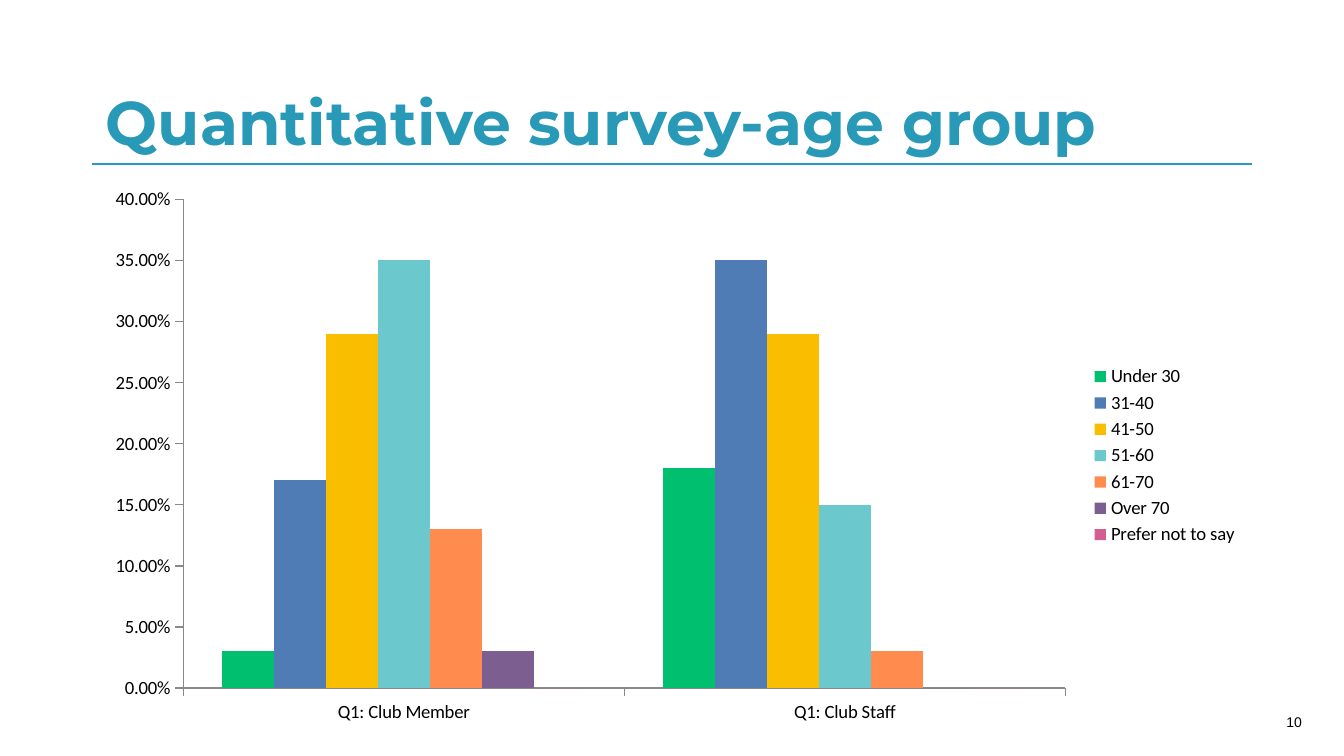
from typing import NamedTuple

from lxml import etree
from pptx import Presentation
from pptx.chart.data import CategoryChartData
from pptx.dml.color import RGBColor
from pptx.enum.chart import XL_CHART_TYPE, XL_LEGEND_POSITION, XL_TICK_MARK
from pptx.enum.shapes import MSO_CONNECTOR
from pptx.enum.text import MSO_ANCHOR, MSO_AUTO_SIZE, PP_ALIGN
from pptx.oxml.ns import qn
from pptx.util import Emu, Pt

COLUMNS = XL_CHART_TYPE.COLUMN_CLUSTERED
LEGEND_RIGHT = XL_LEGEND_POSITION.RIGHT
TICK_OUT, TICK_NONE = XL_TICK_MARK.OUTSIDE, XL_TICK_MARK.NONE
STRAIGHT = MSO_CONNECTOR.STRAIGHT
BOTTOM, MIDDLE = MSO_ANCHOR.BOTTOM, MSO_ANCHOR.MIDDLE
NO_AUTOFIT = MSO_AUTO_SIZE.NONE
LEFT, RIGHT = PP_ALIGN.LEFT, PP_ALIGN.RIGHT

EMU_PER_PX = 9525
MARGIN, CONTENT_WIDTH, RULE_Y = 66, 828, 117

COLORS = {
    "accent": "2899B6", "text": "000000", "axis": "888888",
    "green": "00BF6F", "blue": "507CB6", "yellow": "F9BE00", "teal": "6BC8CD",
    "orange": "FF8B4F", "purple": "7D5E90", "pink": "D25F90",
}


class AgeGroup(NamedTuple):
    label: str
    color: str
    shares: tuple[float, float]


RESPONDENTS = ("Q1: Club Member", "Q1: Club Staff")
AGE_GROUPS = (
    AgeGroup("Under 30", "green", (0.03, 0.18)),
    AgeGroup("31-40", "blue", (0.17, 0.35)),
    AgeGroup("41-50", "yellow", (0.29, 0.29)),
    AgeGroup("51-60", "teal", (0.35, 0.15)),
    AgeGroup("61-70", "orange", (0.13, 0.03)),
    AgeGroup("Over 70", "purple", (0.03, 0)),
    AgeGroup("Prefer not to say", "pink", (0, 0)),
)


def px(length: int) -> Emu:
    return Emu(length * EMU_PER_PX)


def rgb(name: str) -> RGBColor:
    return RGBColor.from_string(COLORS[name])


def style_font(font, name: str, size: float, color: str, bold: bool = False) -> None:
    font.name, font.size, font.bold = name, Pt(size), bold
    font.color.rgb = rgb(color)


def add_title(slide, text: str) -> None:
    title = slide.shapes.title
    title.left, title.top = px(MARGIN), px(29)
    title.width, title.height = px(CONTENT_WIDTH), px(89)
    frame = title.text_frame
    frame.text = text
    frame.vertical_anchor = BOTTOM
    frame.auto_size = NO_AUTOFIT
    heading = frame.paragraphs[0]
    heading.alignment, heading.line_spacing = LEFT, 0.9
    style_font(heading.font, "Montserrat", 33, "accent", bold=True)


def add_rule(slide) -> None:
    rule = slide.shapes.add_connector(
        STRAIGHT, px(MARGIN), px(RULE_Y), px(MARGIN + CONTENT_WIDTH), px(RULE_Y))
    rule.line.color.rgb = rgb("accent")
    rule.line.width = Pt(1)
    etree.SubElement(rule.line._get_or_add_ln().getparent(), qn("a:effectLst"))


def add_page_number(slide, number: str) -> None:
    frame = slide.shapes.add_textbox(px(714), px(501), px(216), px(29)).text_frame
    frame.word_wrap = True
    frame.vertical_anchor = MIDDLE
    frame.margin_right = 0
    frame.text = number
    page = frame.paragraphs[0]
    page.alignment = RIGHT
    style_font(page.font, "Arial", 7.5, "text")


def add_age_chart(slide) -> None:
    survey = CategoryChartData(number_format="0.00%")
    survey.categories = RESPONDENTS
    for group in AGE_GROUPS:
        survey.add_series(group.label, group.shares)
    chart = slide.shapes.add_chart(
        COLUMNS, px(MARGIN), px(127), px(CONTENT_WIDTH), px(397), survey).chart
    style_font(chart.font, "Calibri", 10, "text")
    chart.has_title = False

    # Columns
    plot = chart.plots[0]
    plot.gap_width, plot.overlap = 150, 0
    plot.vary_by_categories = False
    for series, group in zip(plot.series, AGE_GROUPS):
        series.format.fill.solid()
        series.format.fill.fore_color.rgb = rgb(group.color)
        series.invert_if_negative = False

    # Axes
    for axis in (chart.category_axis, chart.value_axis):
        axis.has_major_gridlines = False
        axis.major_tick_mark, axis.minor_tick_mark = TICK_OUT, TICK_NONE
        axis.format.line.color.rgb = rgb("axis")
    shares = chart.value_axis
    shares.minimum_scale, shares.maximum_scale, shares.major_unit = 0, 0.4, 0.05
    shares.tick_labels.number_format = "0.00%"
    shares.tick_labels.number_format_is_linked = False

    # Legend
    chart.has_legend = True
    chart.legend.position = LEGEND_RIGHT
    chart.legend.include_in_layout = False


def main() -> None:
    deck = Presentation()
    deck.slide_width, deck.slide_height = px(960), px(540)
    slide = deck.slides.add_slide(deck.slide_layouts[5])
    add_rule(slide)
    add_page_number(slide, "10")
    add_title(slide, "Quantitative survey-age group")
    add_age_chart(slide)
    deck.save("out.pptx")


if __name__ == "__main__":
    main()
